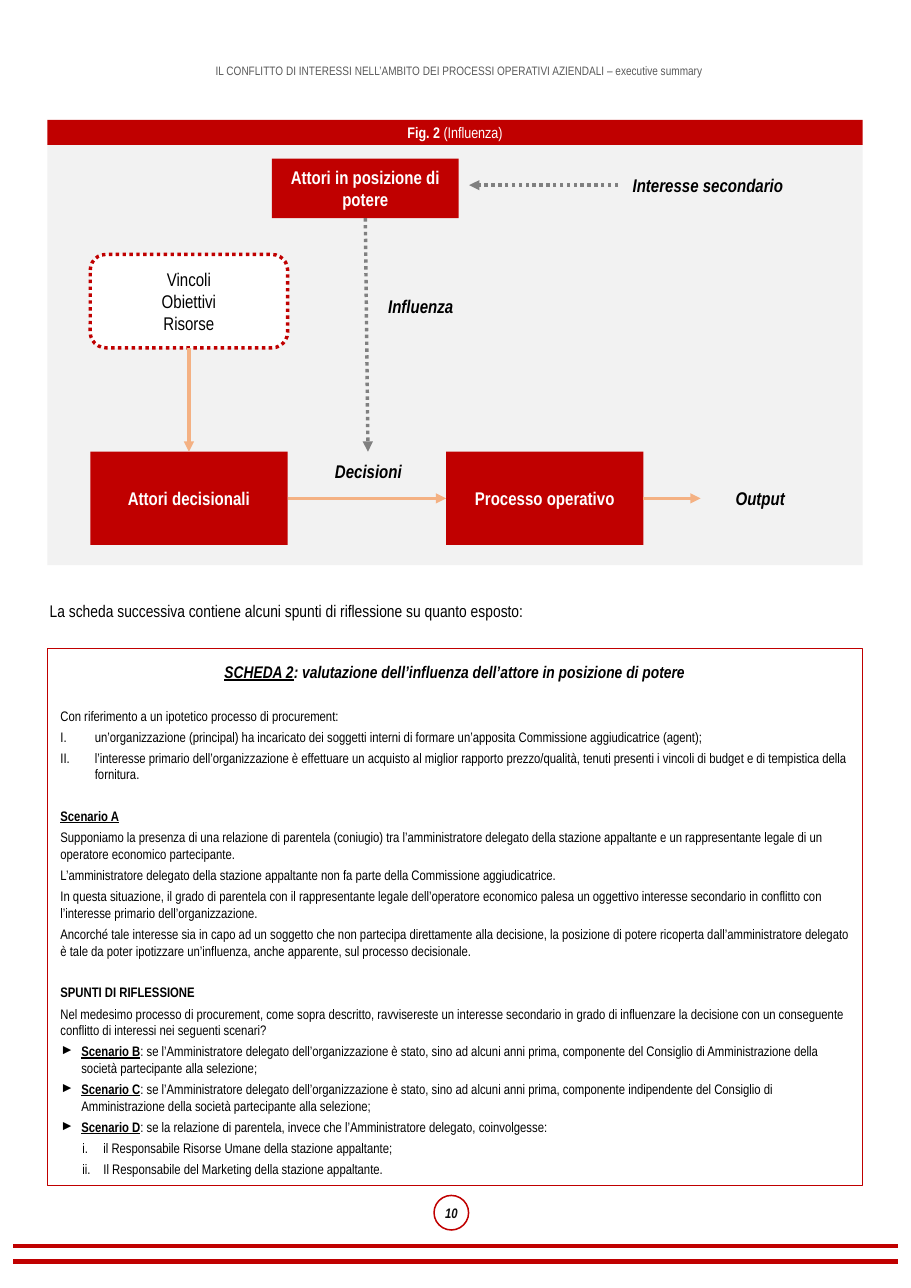
from pptx import Presentation
from pptx.dml.color import RGBColor
from pptx.enum.dml import MSO_LINE
from pptx.enum.shapes import MSO_CONNECTOR, MSO_SHAPE
from pptx.enum.text import MSO_ANCHOR, PP_ALIGN
from pptx.oxml.ns import qn
from pptx.util import Pt
from lxml import etree

RECT, ROUNDED, OVAL = MSO_SHAPE.RECTANGLE, MSO_SHAPE.ROUNDED_RECTANGLE, MSO_SHAPE.OVAL
STRAIGHT, DOTTED = MSO_CONNECTOR.STRAIGHT, MSO_LINE.ROUND_DOT
TOP, MIDDLE = MSO_ANCHOR.TOP, MSO_ANCHOR.MIDDLE
LEFT, CENTER = PP_ALIGN.LEFT, PP_ALIGN.CENTER
SIDE_TOP, SIDE_LEFT, SIDE_BOTTOM, SIDE_RIGHT = range(4)

FONT = "Arial Narrow"
RED, ORANGE, GRAY, PALE = "C00000", "F4B183", "808080", "F2F2F2"
BLACK, WHITE = "000000", "FFFFFF"

HEADER = "IL CONFLITTO DI INTERESSI NELL’AMBITO DEI PROCESSI OPERATIVI AZIENDALI – executive summary"
FIGURE_TITLE = [("Fig. 2 ", "b"), ("(Influenza)", "")]
INTRO = "La scheda successiva contiene alcuni spunti di riflessione su quanto esposto:"
CARD_TITLE = [("SCHEDA 2", "biu"),
              (": valutazione dell’influenza dell’attore in posizione di potere", "bi")]
CARD = [
    ("section", [("Con riferimento a un ipotetico processo di procurement:", "")]),
    ("roman", [("un’organizzazione (principal) ha incaricato dei soggetti interni di formare "
                "un’apposita Commissione aggiudicatrice (agent);", "")]),
    ("roman", [("l’interesse primario dell’organizzazione è effettuare un acquisto al miglior rapporto "
                "prezzo/qualità, tenuti presenti i vincoli di budget e di tempistica della fornitura.", "")]),
    ("section", [("Scenario A", "bu")]),
    ("plain", [("Supponiamo la presenza di una relazione di parentela (coniugio) tra l’amministratore "
                "delegato della stazione appaltante e un rappresentante legale di un operatore "
                "economico partecipante.", "")]),
    ("plain", [("L’amministratore delegato della stazione appaltante non fa parte della Commissione "
                "aggiudicatrice.", "")]),
    ("plain", [("In questa situazione, il grado di parentela con il rappresentante legale dell’operatore "
                "economico palesa un oggettivo interesse secondario in conflitto con l’interesse "
                "primario dell’organizzazione.", "")]),
    ("plain", [("Ancorché tale interesse sia in capo ad un soggetto che non partecipa direttamente alla "
                "decisione, la posizione di potere ricoperta dall’amministratore delegato è tale da "
                "poter ipotizzare un’influenza, anche apparente, sul processo decisionale.", "")]),
    ("section", [("SPUNTI DI RIFLESSIONE", "b")]),
    ("plain", [("Nel medesimo processo di procurement, come sopra descritto, ravvisereste un interesse "
                "secondario in grado di influenzare la decisione con un conseguente conflitto di "
                "interessi nei seguenti scenari?", "")]),
    ("arrow", [("Scenario B", "bu"),
               (": se l’Amministratore delegato dell’organizzazione è stato, sino ad alcuni anni prima, "
                "componente del Consiglio di Amministrazione della società partecipante alla "
                "selezione;", "")]),
    ("arrow", [("Scenario C", "bu"),
               (": se l’Amministratore delegato dell’organizzazione è stato, sino ad alcuni anni prima, "
                "componente indipendente del Consiglio di Amministrazione della società partecipante "
                "alla selezione;", "")]),
    ("arrow", [("Scenario D", "bu"),
               (": se la relazione di parentela, invece che l’Amministratore delegato, "
                "coinvolgesse:", "")]),
    ("small_roman", [("il Responsabile Risorse Umane della stazione appaltante;", "")]),
    ("small_roman", [("Il Responsabile del Marketing della stazione appaltante.", "")]),
]
BULLETS = {
    "roman": (22.5, 22.5, "buAutoNum", {"type": "romanUcPeriod"}),
    "arrow": (13.7, 13.7, "buChar", {"char": "►"}),
    "small_roman": (28.1, 13.7, "buAutoNum", {"type": "romanLcPeriod"}),
}

PAGE_W, PAGE_H = 595.44, 841.68
PANEL_X, PANEL_W = 31, 532.8
BOX_W, BOX_H = 129, 61
ACTORS_X, PROCESS_X = 59, 291.6
LIMITS_Y, FLOW_Y = 166.3, 295.2
FLOW_MID = FLOW_Y + BOX_H / 2
LABEL_H = 26

deck = Presentation()
deck.slide_width, deck.slide_height = Pt(PAGE_W), Pt(PAGE_H)
page = deck.slides.add_slide(deck.slide_layouts[6])


def color(value):
    return RGBColor.from_string(value)


def write(para, runs, size, ink, align=CENTER):
    para.alignment = align
    for text, marks in runs:
        span = para.add_run()
        span.text = text
        font = span.font
        font.name, font.size = FONT, Pt(size)
        font.bold, font.italic, font.underline = "b" in marks, "i" in marks, "u" in marks
        font.color.rgb = color(ink)


def set_frame(box, inset, anchor):
    frame = box.text_frame
    frame.word_wrap = True
    frame.vertical_anchor = anchor
    frame.margin_left = frame.margin_right = Pt(inset)
    frame.margin_top = frame.margin_bottom = Pt(inset)
    return frame


def add_box(x, y, w, h, lines=(), size=12, ink=WHITE, fill=RED, edge=None, weight=1,
            dash=None, kind=RECT, inset=6, anchor=MIDDLE):
    box = page.shapes.add_shape(kind, Pt(x), Pt(y), Pt(w), Pt(h))
    box.shadow.inherit = False
    if fill:
        box.fill.solid()
        box.fill.fore_color.rgb = color(fill)
    else:
        box.fill.background()
    if edge:
        box.line.color.rgb = color(edge)
        box.line.width = Pt(weight)
        if dash:
            box.line.dash_style = dash
    else:
        box.line.fill.background()
    frame = set_frame(box, inset, anchor)
    for index, runs in enumerate(lines):
        para = frame.add_paragraph() if index else frame.paragraphs[0]
        write(para, runs, size, ink)
    return box


def add_label(x, y, w, h, text, size=12, ink=BLACK, marks="bi", align=CENTER, inset=6):
    label = page.shapes.add_textbox(Pt(x), Pt(y), Pt(w), Pt(h))
    frame = set_frame(label, inset, MIDDLE)
    write(frame.paragraphs[0], [(text, marks)], size, ink, align)
    return label


def add_line(start, end, ink, weight=2.25, arrow=True, dash=None, source=None, target=None):
    line = page.shapes.add_connector(STRAIGHT, *(Pt(value) for value in start + end))
    line.line.color.rgb = color(ink)
    line.line.width = Pt(weight)
    if dash:
        line.line.dash_style = dash
    if arrow:
        etree.SubElement(line.line._get_or_add_ln(), qn("a:tailEnd"), type="triangle")
    etree.SubElement(line._element.spPr, qn("a:effectLst"))
    if source:
        line.begin_connect(*source)
    if target:
        line.end_connect(*target)


def add_card():
    card = add_box(PANEL_X, 424, PANEL_W, 350.6, [CARD_TITLE], 11, BLACK, WHITE, RED, 0.75,
                   inset=8.5, anchor=TOP)
    frame = card.text_frame
    frame.paragraphs[0].space_after = Pt(3)
    for style, runs in CARD:
        para = frame.add_paragraph()
        write(para, runs, 9, BLACK, LEFT)
        para.space_before = Pt(13.5 if style == "section" else 0)
        para.space_after = Pt(3)
        if style in BULLETS:
            margin, hanging, tag, values = BULLETS[style]
            props = para._p.get_or_add_pPr()
            props.set("marL", str(Pt(margin)))
            props.set("indent", str(-Pt(hanging)))
            etree.SubElement(props, qn("a:buFont"), typeface=FONT)
            etree.SubElement(props, qn("a:" + tag), values)


add_label(PANEL_X + 3, 31.7, PANEL_W, 28.8, HEADER, 8, "595959", "", inset=0)
add_box(312 - 28.3, 781.2, 22.6, 22.6, [[("10", "bi")]], 9, "0D0D0D", WHITE, RED, kind=OVAL, inset=0)
for rule_y in (814.3, 824.4):
    add_line((8.6, rule_y), (586.8, rule_y), RED, 3, arrow=False)

add_card()
add_label(32.5, 392, PANEL_W, 14, INTRO, 11, marks="", align=LEFT, inset=0)

add_box(PANEL_X, 94.3, PANEL_W, 275, fill=PALE)
add_box(PANEL_X, 78.3, PANEL_W, 16.4, [FIGURE_TITLE], 10, inset=0)
actors = add_box(ACTORS_X, FLOW_Y, BOX_W, BOX_H, [[("Attori decisionali", "b")]])
process = add_box(PROCESS_X, FLOW_Y, BOX_W, BOX_H, [[("Processo operativo", "b")]])
limits = add_box(ACTORS_X, LIMITS_Y, BOX_W, BOX_H,
                 [[(word, "")] for word in ("Vincoli", "Obiettivi", "Risorse")],
                 ink=BLACK, fill=WHITE, edge=RED, weight=2.25, dash=DOTTED, kind=ROUNDED)
power = add_box(177.8, 103.7, 122, 38.9, [[("Attori in posizione di potere", "b")]])

add_label(192.2, FLOW_Y, 97.2, LABEL_H, "Decisioni")
output = add_label(458, FLOW_MID - LABEL_H / 2, 77.8, LABEL_H, "Output")
add_label(243, 190, 64, 20, "Influenza", inset=3)
add_label(398.2, 90.7, BOX_W, BOX_H, "Interesse secondario")

for source, target in (((actors, SIDE_RIGHT), (process, SIDE_LEFT)),
                       ((process, SIDE_RIGHT), (output, SIDE_LEFT)),
                       ((limits, SIDE_BOTTOM), (actors, SIDE_TOP))):
    add_line((0, 0), (0, 0), ORANGE, source=source, target=target)
add_line((238.8, 142.6), (240.5, FLOW_Y), GRAY, dash=DOTTED, source=(power, SIDE_BOTTOM))
add_line((404, 121), (306.7, 121), GRAY, dash=DOTTED)

deck.save("out.pptx")
